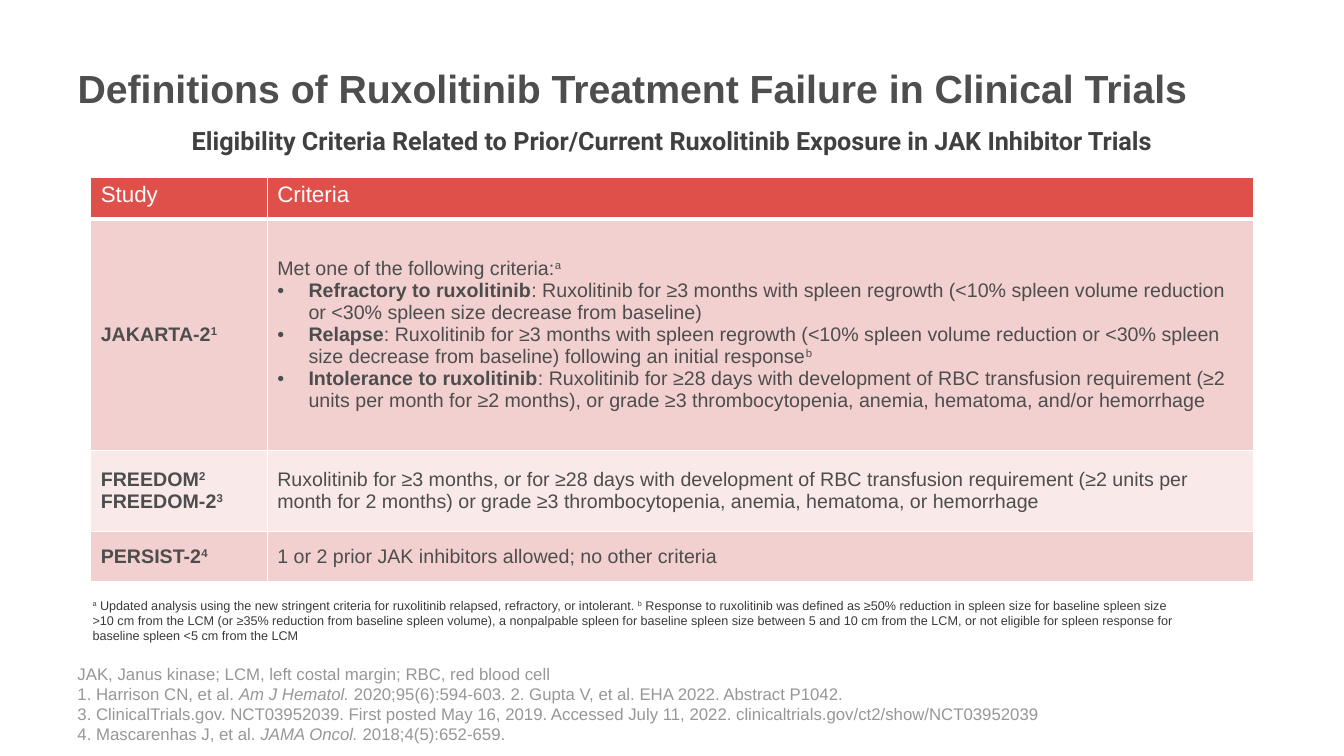
from pptx import Presentation
from pptx.dml.color import RGBColor as Rgb
from pptx.enum.text import MSO_ANCHOR as Anchor, MSO_AUTO_SIZE as Fit, PP_ALIGN as Align
from pptx.oxml import parse_xml
from pptx.oxml.ns import nsdecls
from pptx.util import Inches, Pt

HUES = {"title": "4D4E4D", "sub": "404040", "note": "3A3A3A", "source": "979797",
        "cell": "4D4D4D", "white": "FFFFFF", "head": "DF504B", "dark": "F3D0D0",
        "light": "F9E9E9"}

# A paragraph is a list of (text, style) runs: b bold, i italic, ^ superscript.
# A bulleted paragraph starts with BULLET.
BULLET = "•"
NOTE = [[("a", "^"), (" Updated analysis using the new stringent criteria for ruxolitinib "
                      "relapsed, refractory, or intolerant. ", ""),
         ("b", "^"), (" Response to ruxolitinib was defined as ≥50% reduction in spleen size for "
                      "baseline spleen size >10 cm from the LCM (or ≥35% reduction from baseline "
                      "spleen volume), a nonpalpable spleen for baseline spleen size between 5 and "
                      "10 cm from the LCM, or not eligible for spleen response for baseline spleen "
                      "<5 cm from the LCM", "")]]
SOURCES = [
    [("JAK, Janus kinase; LCM, left costal margin; RBC, red blood cell", "")],
    [("1. Harrison CN, et al. ", ""), ("Am J Hematol. ", "i"),
     ("2020;95(6):594-603. 2. Gupta V, et al. EHA 2022. Abstract P1042.", "")],
    [("3. ClinicalTrials.gov. NCT03952039. First posted May 16, 2019. Accessed July 11, 2022. "
      "clinicaltrials.gov/ct2/show/NCT03952039", "")],
    [("4. Mascarenhas J, et al. ", ""), ("JAMA Oncol. ", "i"), ("2018;4(5):652-659.", "")],
]
TRIALS = [
    ([[("JAKARTA-2", "b"), ("1", "b^")]],
     [[("Met one of the following criteria:", ""), ("a", "^")],
      [BULLET, ("Refractory to ruxolitinib", "b"),
       (": Ruxolitinib for ≥3 months with spleen regrowth (<10% spleen volume reduction\n"
        "or <30% spleen size decrease from baseline)", "")],
      [BULLET, ("Relapse", "b"),
       (": Ruxolitinib for ≥3 months with spleen regrowth (<10% spleen volume reduction or "
        "<30% spleen size decrease from baseline) following an initial response", ""),
       ("b", "^")],
      [BULLET, ("Intolerance to ruxolitinib", "b"),
       (": Ruxolitinib for ≥28 days with development of RBC transfusion requirement (≥2 units "
        "per month for ≥2 months), or grade ≥3 thrombocytopenia, anemia, hematoma, and/or "
        "hemorrhage", "")]]),
    ([[("FREEDOM", "b"), ("2", "b^")], [("FREEDOM-2", "b"), ("3", "b^")]],
     [[("Ruxolitinib for ≥3 months, or for ≥28 days with development of RBC transfusion "
        "requirement (≥2 units per month for 2 months) or grade ≥3 thrombocytopenia, anemia, "
        "hematoma, or hemorrhage", "")]]),
    ([[("PERSIST-2", "b"), ("4", "b^")]],
     [[("1 or 2 prior JAK inhibitors allowed; no other criteria", "")]]),
]


def write(frame, paras, size, hue, font="Arial", align=Align.LEFT):
    """Fill a text frame with formatted paragraphs."""
    for n, runs in enumerate(paras):
        para = frame.add_paragraph() if n else frame.paragraphs[0]
        para.alignment = align
        if runs[0] == BULLET:
            mark(para)
            runs = runs[1:]
        for text, style in runs:
            for k, part in enumerate(text.split("\n")):
                if k:
                    para.add_line_break()
                run = para.add_run()
                run.text = part
                face = run.font
                face.size, face.name = Pt(size), font
                face.bold, face.italic = "b" in style, "i" in style
                face.color.rgb = Rgb.from_string(HUES[hue])
                if "^" in style:
                    run._r.get_or_add_rPr().set("baseline", "30000")


def mark(para, dent=0.31):
    """Give a paragraph a hanging bullet."""
    props = para._p.get_or_add_pPr()
    props.set("marL", str(Inches(dent)))
    props.set("indent", str(-Inches(dent)))
    props.append(parse_xml(f'<a:buFont {nsdecls("a")} typeface="Arial"/>'))
    props.append(parse_xml(f'<a:buChar {nsdecls("a")} char="{BULLET}"/>'))


def add_text(slide, box, paras, size, hue, anchor=Anchor.TOP, **style):
    """Place a wrapping text box."""
    frame = slide.shapes.add_textbox(*map(Inches, box)).text_frame
    frame.word_wrap = True
    frame.vertical_anchor = anchor
    write(frame, paras, size, hue, **style)


def add_title(slide, box, text):
    """Move and format the title placeholder."""
    title = slide.shapes.title
    title.left, title.top, title.width, title.height = map(Inches, box)
    frame = title.text_frame
    frame.auto_size = Fit.NONE
    frame.vertical_anchor = Anchor.MIDDLE
    write(frame, [[(text, "b")]], 28, "title")


def paint(cell, hue, base=1):
    """Set the white borders and the fill of a cell."""
    props = cell._tc.get_or_add_tcPr()
    for side, width in zip("LRTB", (1, 1, 1, base)):
        props.append(parse_xml(
            f'<a:ln{side} {nsdecls("a")} w="{Pt(width)}"><a:solidFill>'
            f'<a:srgbClr val="{HUES["white"]}"/></a:solidFill></a:ln{side}>'))
    cell.fill.solid()
    cell.fill.fore_color.rgb = Rgb.from_string(HUES[hue])


def add_grid(slide, box, cols, rows):
    """Build the table of trials and their criteria."""
    grid = slide.shapes.add_table(len(rows), len(cols), *map(Inches, box)).table
    for col, width in zip(grid.columns, cols):
        col.width = Inches(width)
    for row, height in zip(grid.rows, rows):
        row.height = Inches(height)
    for c, head in enumerate(("Study", "Criteria")):
        cell = grid.cell(0, c)
        paint(cell, "head", base=3)
        write(cell.text_frame, [[(head, "")]], 16, "white")
    for r, trial in enumerate(TRIALS, 1):
        for c, paras in enumerate(trial):
            cell = grid.cell(r, c)
            cell.vertical_anchor = Anchor.MIDDLE
            paint(cell, "dark" if r % 2 else "light")
            write(cell.text_frame, paras, 14, "cell")


def main():
    deck = Presentation()
    deck.slide_width, deck.slide_height = Inches(13.33), Inches(7.5)
    slide = deck.slides.add_slide(deck.slide_layouts[5])
    add_title(slide, (0.67, 0.22, 11.75, 1.3),
              "Definitions of Ruxolitinib Treatment Failure in Clinical Trials")
    add_text(slide, (0.82, 5.88, 11.09, 0.66), NOTE, 9, "note")
    add_grid(slide, (0.9, 1.76, 11.53, 4.01), (1.75, 9.78), (0.41, 2.3, 0.8, 0.5))
    add_text(slide, (0.9, 1.19, 11.53, 0.4),
             [[("Eligibility Criteria Related to Prior/Current Ruxolitinib Exposure "
                "in JAK Inhibitor Trials", "b")]],
             18, "sub", font="Roboto", align=Align.CENTER)
    add_text(slide, (0.67, 6.95, 11.75, 0.48), SOURCES, 12, "source", anchor=Anchor.BOTTOM)
    deck.save("out.pptx")


if __name__ == "__main__":
    main()
